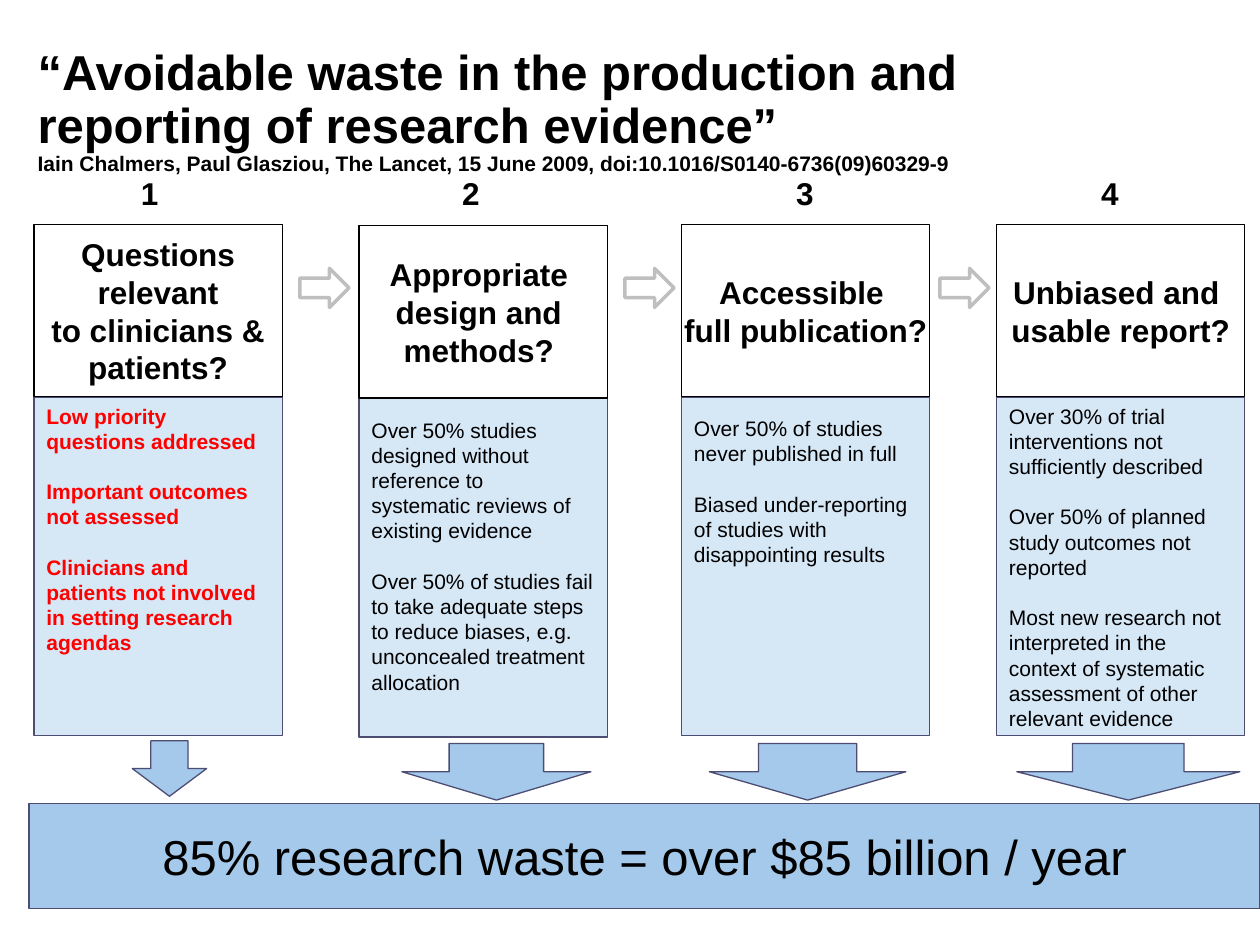
"""Build a slide on four stages of avoidable research waste."""
from lxml import etree
from pptx import Presentation
from pptx.dml.color import RGBColor
from pptx.enum.shapes import MSO_SHAPE
from pptx.enum.text import MSO_ANCHOR, PP_ALIGN
from pptx.oxml.ns import qn
from pptx.util import Inches, Pt

RECTANGLE = MSO_SHAPE.RECTANGLE
RIGHT_ARROW = MSO_SHAPE.RIGHT_ARROW
DOWN_ARROW = MSO_SHAPE.DOWN_ARROW
LEFT, CENTER = PP_ALIGN.LEFT, PP_ALIGN.CENTER
TOP, MIDDLE = MSO_ANCHOR.TOP, MSO_ANCHOR.MIDDLE

BLACK, RED, WHITE, GREY = "000000", "FF0000", "FFFFFF", "BFBFBF"
PALE_BLUE, BLUE, NAVY = "D6E7F6", "A5C9EA", "4D4D73"

TITLE = "“Avoidable waste in the production and reporting of research evidence”"
CITATION = "Iain Chalmers, Paul Glasziou, The Lancet, 15 June 2009, doi:10.1016/S0140-6736(09)60329-9"
TOTAL = "85% research waste = over $85 billion / year"
NUMBERS = "1\t2\t3\t4"
NUMBER_TABS = [2.55, 5.2, 7.62]

STAGES = [
    {
        "left": 0.27, "top": 1.78, "inset": 0.05, "color": RED,
        "question": ["Questions relevant", "to clinicians & patients?"],
        "findings": [
            "Low priority questions addressed",
            "Important outcomes not assessed",
            "Clinicians and patients not involved in setting research agendas",
        ],
        "down_arrow": (1.05, 5.88, 0.59, 0.44),
    },
    {
        "left": 2.85, "top": 1.79, "inset": 0.15, "color": BLACK,
        "question": ["Appropriate \vdesign and ", "methods? "],
        "findings": [
            "Over 50% studies designed without reference to\vsystematic reviews of existing evidence",
            "Over 50% of studies fail to take adequate steps to reduce biases, "
            "e.g. unconcealed treatment allocation",
        ],
        "down_arrow": (3.19, 5.9, 1.5, 0.45),
    },
    {
        "left": 5.41, "top": 1.78, "inset": 0.15, "color": BLACK,
        "question": ["Accessible ", "full publication?"],
        "findings": [
            "Over 50% of studies never published in full",
            "Biased under-reporting of studies with disappointing results",
        ],
        "down_arrow": (5.63, 5.9, 1.56, 0.45),
    },
    {
        "left": 7.91, "top": 1.78, "inset": 0.05, "color": BLACK,
        "question": ["Unbiased and ", "usable report?"],
        "findings": [
            "Over 30% of trial interventions not sufficiently described",
            "Over 50% of planned study outcomes not reported",
            "Most new research not interpreted in the context of systematic "
            "assessment of other relevant evidence",
        ],
        "down_arrow": (8.07, 5.9, 1.77, 0.45),
    },
]
STAGE_WIDTH, QUESTION_HEIGHT, FINDINGS_HEIGHT = 1.97, 1.37, 2.69
NEXT_ARROW_LEFTS = [2.38, 4.96, 7.46]


def rgb(color):
    return RGBColor.from_string(color)


def add_box(slide, kind, box, fill=None, line=NAVY, weight=0.75):
    shape = slide.shapes.add_shape(kind, *map(Inches, box))
    shape.shadow.inherit = False
    if fill:
        shape.fill.solid()
        shape.fill.fore_color.rgb = rgb(fill)
    else:
        shape.fill.background()
    shape.line.color.rgb = rgb(line)
    shape.line.width = Pt(weight)
    return shape


def write(shape, paragraphs, size=12, color=BLACK, bold=False, align=LEFT,
          anchor=MIDDLE, gap=0, spacing=None, side=0.1, top=0.05):
    frame = shape.text_frame
    frame.word_wrap = True
    frame.vertical_anchor = anchor
    frame.margin_left = frame.margin_right = Inches(side)
    frame.margin_top = Inches(top)
    for index, text in enumerate(paragraphs):
        paragraph = frame.add_paragraph() if index else frame.paragraphs[0]
        paragraph.text = text
        paragraph.alignment = align
        if spacing:
            paragraph.line_spacing = spacing
        if index and gap:
            paragraph.space_before = Pt(gap)
        for run in paragraph.runs:
            style(run, size, color, bold)
    return frame


def style(run, size, color, bold):
    run.font.name = "Arial"
    run.font.size = Pt(size)
    run.font.bold = bold
    run.font.color.rgb = rgb(color)


def add_text(slide, box, paragraphs, **text_format):
    return write(slide.shapes.add_textbox(*map(Inches, box)), paragraphs, **text_format)


def add_title(slide):
    frame = add_text(slide, (0.2, 0.5, 8.58, 0.78), [TITLE], size=28, bold=True, spacing=0.9)
    paragraph = frame.paragraphs[0]
    paragraph.add_line_break()
    run = paragraph.add_run()
    run.text = CITATION
    style(run, 12, BLACK, True)


def add_numbers(slide):
    frame = add_text(slide, (1.02, 1.33, 8.52, 0.4), [NUMBERS], size=18, bold=True, anchor=TOP)
    properties = frame.paragraphs[0]._p.get_or_add_pPr()
    tabs = etree.SubElement(properties, qn("a:tabLst"))
    for position in NUMBER_TABS:
        etree.SubElement(tabs, qn("a:tab"), pos=str(Inches(position)), algn="l")


def add_stage(slide, stage):
    left, top = stage["left"], stage["top"]
    findings = add_box(slide, RECTANGLE, (left, top + QUESTION_HEIGHT, STAGE_WIDTH, FINDINGS_HEIGHT), PALE_BLUE)
    write(findings, stage["findings"], color=stage["color"], bold=stage["color"] == RED,
          anchor=TOP, gap=14.4, top=stage["inset"])
    question = add_box(slide, RECTANGLE, (left, top, STAGE_WIDTH, QUESTION_HEIGHT), line=BLACK)
    write(question, stage["question"], size=18, bold=True, align=CENTER, side=0)
    add_box(slide, DOWN_ARROW, stage["down_arrow"], BLUE)


def main():
    presentation = Presentation()
    presentation.slide_width, presentation.slide_height = Inches(10), Inches(7.5)
    slide = presentation.slides.add_slide(presentation.slide_layouts[6])
    total = add_box(slide, RECTANGLE, (0.23, 6.38, 9.77, 0.83), BLUE)
    write(total, [TOTAL], size=28, align=CENTER)
    add_title(slide)
    for stage in STAGES:
        add_stage(slide, stage)
    for left in NEXT_ARROW_LEFTS:
        add_box(slide, RIGHT_ARROW, (left, 2.13, 0.39, 0.31), WHITE, GREY, 2)
    add_numbers(slide)
    presentation.save("out.pptx")


if __name__ == "__main__":
    main()
